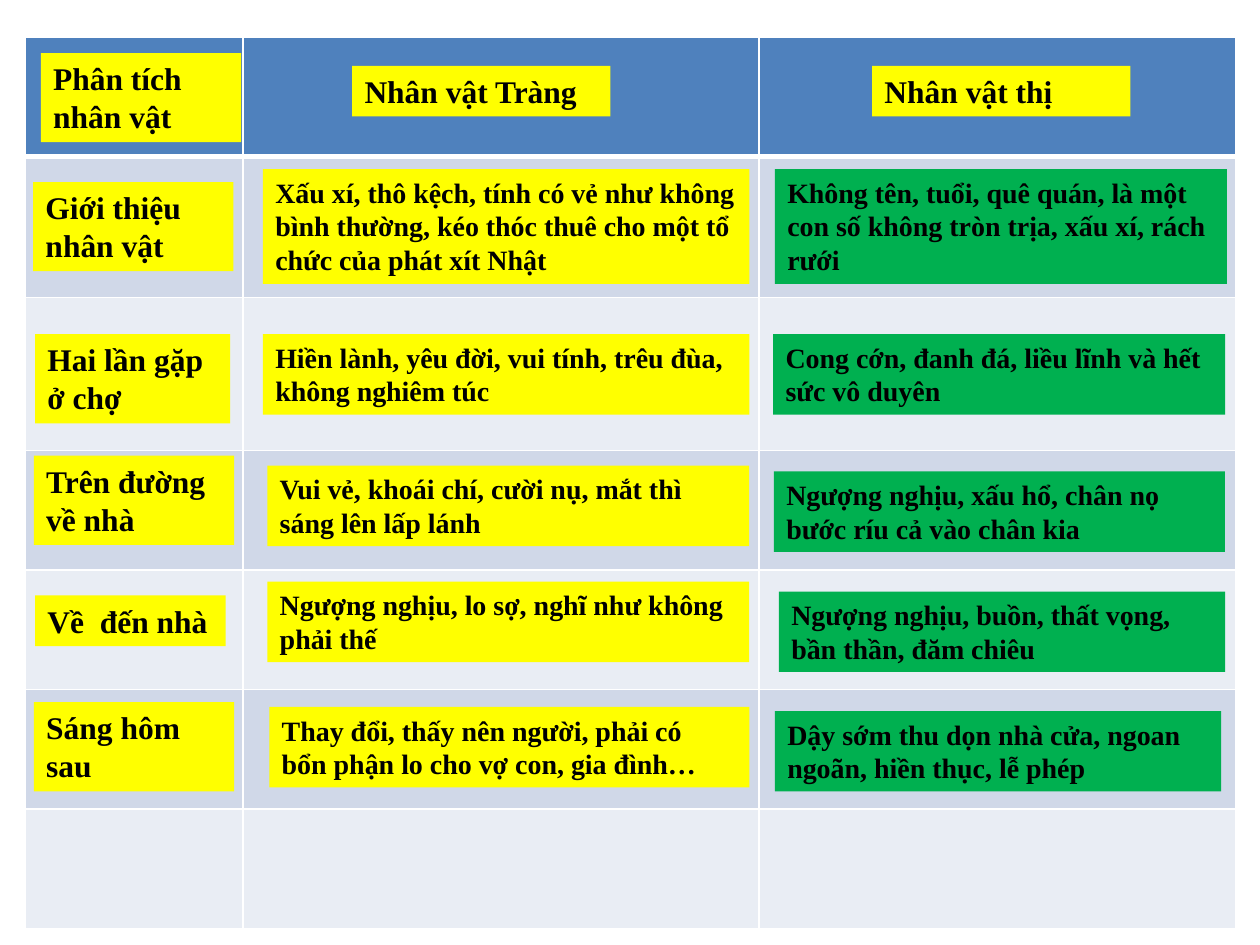
"""Build a slide comparing two characters across the stages of a story."""
from lxml import etree
from pptx import Presentation
from pptx.dml.color import RGBColor
from pptx.enum import text
from pptx.oxml import ns
from pptx.util import Pt

BLACK = RGBColor(0x00, 0x00, 0x00)
YELLOW = RGBColor(0xFF, 0xFF, 0x00)
GREEN = RGBColor(0x00, 0xB0, 0x50)
HEADER = RGBColor(0x4F, 0x81, 0xBD)
BANDS = [RGBColor(0xE9, 0xED, 0xF4), RGBColor(0xD0, 0xD8, 0xE8)]
BORDER = RGBColor(0xFF, 0xFF, 0xFF)

COLUMNS = [124.7, 294.8, 272.2]
ROWS = [68.3, 80.8, 87.3, 68.3, 68.3, 68.3, 68.3]

HEADINGS = [
    ("Phân tích nhân vật", 23.3, 30.3, 114.5, 51),
    ("Nhân vật Tràng", 201.2, 37.6, 147.6, 29),
    ("Nhân vật thị", 498.3, 37.6, 147.6, 29),
]
STAGES = [
    ("Giới thiệu nhân vật", 18.9, 104, 114.5, 51),
    ("Hai lần gặp ở chợ", 20, 190.9, 111.5, 51),
    ("Trên đường về nhà", 19.3, 260.4, 114.5, 51),
    ("Về  đến nhà", 20, 340.2, 109, 29),
    ("Sáng hôm sau", 19.3, 401.2, 114.5, 51),
]
TRANG = [
    ("Xấu xí, thô kệch, tính có vẻ như không bình thường, kéo thóc thuê cho một tổ chức của phát xít Nhật",
     150.2, 96.7, 278, 65.5),
    ("Hiền lành, yêu đời, vui tính, trêu đùa, không nghiêm túc", 150.2, 190.9, 278, 46),
    ("Vui vẻ, khoái chí, cười nụ, mắt thì sáng lên lấp lánh", 152.8, 266.1, 275.3, 46),
    ("Ngượng nghịu, lo sợ, nghĩ như không phải thế", 152.8, 332.4, 275.3, 46),
    ("Thay đổi, thấy nên người, phải có  bổn phận lo cho vợ con, gia đình…", 153.9, 404, 274.3, 46),
]
THI = [
    ("Không tên, tuổi, quê quán, là một con số không tròn trịa, xấu xí, rách rưới", 442.8, 96.7, 258.3, 65.5),
    ("Cong cớn, đanh đá, liều lĩnh và hết sức vô duyên", 441.8, 190.9, 258.3, 46),
    ("Ngượng nghịu, xấu hổ, chân nọ bước ríu cả vào chân kia", 442.2, 269.4, 257.8, 46),
    ("Ngượng nghịu, buồn, thất vọng, bần thần, đăm chiêu", 445.1, 338, 255, 46),
    ("Dậy sớm thu dọn nhà cửa, ngoan ngoãn, hiền thục, lễ phép", 442.8, 406.3, 255, 46),
]


def add_label(label, *, x, y, w, h, size, fill):
    sp = s.shapes.add_textbox(Pt(x), Pt(y), Pt(w), Pt(h))
    sp.fill.solid()
    sp.fill.fore_color.rgb = fill
    tf = sp.text_frame
    tf.word_wrap = True
    tf.auto_size = text.MSO_AUTO_SIZE.SHAPE_TO_FIT_TEXT
    r = tf.paragraphs[0].add_run()
    r.text = label
    r.font.name = "Times New Roman"
    r.font.size = Pt(size)
    r.font.bold = True
    r.font.color.rgb = BLACK


def set_border(cell, side, width, position):
    ln = etree.Element(ns.qn(f"a:ln{side}"), w=str(Pt(width)))
    fill = etree.SubElement(ln, ns.qn("a:solidFill"))
    etree.SubElement(fill, ns.qn("a:srgbClr"), val=str(BORDER))
    cell._tc.get_or_add_tcPr().insert(position, ln)


prs = Presentation()
prs.slide_width, prs.slide_height = Pt(720), Pt(540)
s = prs.slides.add_slide(prs.slide_layouts[6])

table = s.shapes.add_table(len(ROWS), len(COLUMNS), Pt(14.2), Pt(21),
                           Pt(sum(COLUMNS)), Pt(sum(ROWS))).table
for column, width in zip(table.columns, COLUMNS):
    column.width = Pt(width)
for i, (row, height) in enumerate(zip(table.rows, ROWS)):
    row.height = Pt(height)
    for cell in row.cells:
        cell.fill.solid()
        cell.fill.fore_color.rgb = BANDS[i % 2] if i else HEADER
        widths = {"L": 1, "R": 1, "T": 3 if i == 1 else 1, "B": 3 if i == 0 else 1}
        for position, (side, width) in enumerate(widths.items()):
            set_border(cell, side, width, position)

for labels, size, fill in [(HEADINGS, 18, YELLOW), (STAGES, 18, YELLOW),
                           (TRANG, 16, YELLOW), (THI, 16, GREEN)]:
    for label, x, y, w, h in labels:
        add_label(label, x=x, y=y, w=w, h=h, size=size, fill=fill)

prs.save("out.pptx")
